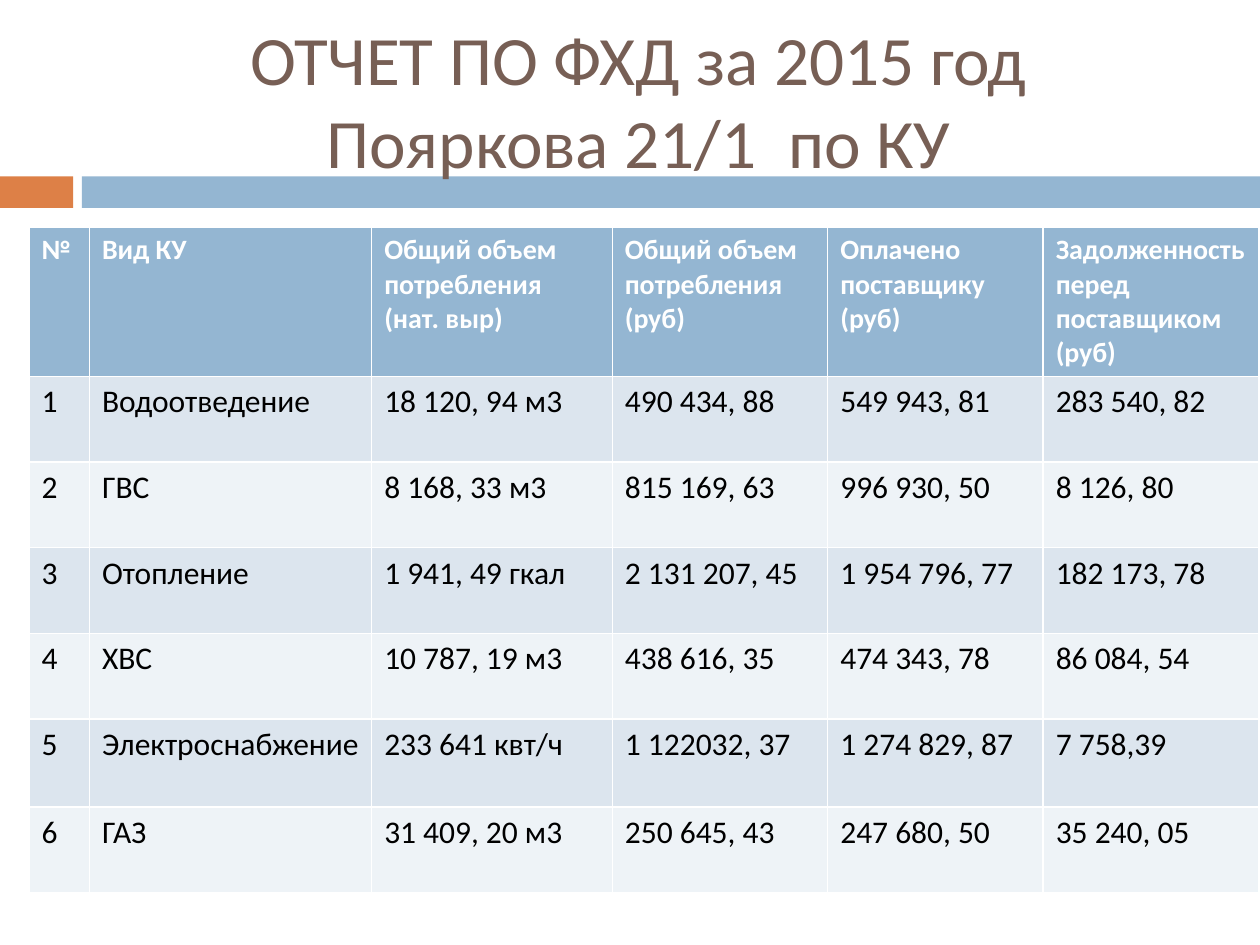
import pptx
import pptx.util
import pptx.dml.color
import pptx.enum.shapes
import pptx.enum.text

Inches = pptx.util.Inches

TITLE = "ОТЧЕТ ПО ФХД за 2015 год \vПояркова 21/1  по КУ "
HEADERS = [
    "№",
    "Вид КУ",
    "Общий объем потребления\n(нат. выр)",
    "Общий объем потребления\n(руб)",
    "Оплачено поставщику\n(руб)",
    "Задолженность перед поставщиком\n(руб)",
]
UTILITIES = [
    ("Водоотведение", "18 120, 94 м3", "490 434, 88", "549 943, 81", "283 540, 82"),
    ("ГВС", "8 168, 33 м3", "815 169, 63", "996 930, 50", "8 126, 80"),
    ("Отопление", "1 941, 49 гкал", "2 131 207, 45", "1 954 796, 77", "182 173, 78"),
    ("ХВС", "10 787, 19 м3", "438 616, 35", "474 343, 78", "86 084, 54"),
    ("Электроснабжение", "233 641 квт/ч", "1 122032, 37", "1 274 829, 87", "7 758,39"),
    ("ГАЗ", "31 409, 20 м3", "250 645, 43", "247 680, 50", "35 240, 05"),
]
COLUMN_WIDTHS = [0.48, 2.24, 1.91, 1.71, 1.71, 1.71]
ROW_HEIGHTS = [1.04, 0.68, 0.68, 0.68, 0.68, 0.7, 0.68]
BARS = [(0, 0.58, "orange"), (0.65, 9.35, "blue")]

THEME = {
    "font": "Calibri",
    "sizes": {"title": 39.6, "header": 16, "body": 18},
    "colors": {
        "title": "775F55",
        "orange": "DD8047",
        "blue": "94B6D2",
        "odd": "DCE5EE",
        "even": "EEF3F7",
        "header": "FFFFFF",
        "body": "000000",
    },
}


def color(name):
    return pptx.dml.color.RGBColor.from_string(THEME["colors"][name])


def format_text(frame, role, bold=False):
    for para in frame.paragraphs:
        for span in para.runs:
            span.font.name = THEME["font"]
            span.font.size = pptx.util.Pt(THEME["sizes"][role])
            span.font.color.rgb = color(role)
            span.font.bold = bold


def add_bars(page):
    for position, (left, width, fill) in enumerate(BARS):
        bar = page.shapes.add_shape(
            pptx.enum.shapes.MSO_SHAPE.RECTANGLE,
            Inches(left), Inches(1.4), Inches(width), Inches(0.25),
        )
        bar.shadow.inherit = False
        bar.fill.solid()
        bar.fill.fore_color.rgb = color(fill)
        bar.line.fill.background()
        page.shapes.element.insert(2 + position, bar.element)


def add_title(page):
    title = page.shapes.title
    title.left, title.top = Inches(0.67), Inches(0.25)
    title.width, title.height = Inches(8.92), Inches(1.08)
    frame = title.text_frame
    frame.text = TITLE
    frame.word_wrap = True
    frame.auto_size = pptx.enum.text.MSO_AUTO_SIZE.NONE
    frame.vertical_anchor = pptx.enum.text.MSO_ANCHOR.MIDDLE
    frame.paragraphs[0].alignment = pptx.enum.text.PP_ALIGN.CENTER
    format_text(frame, "title")


def add_report(page):
    rows = [HEADERS] + [(str(number), *row) for number, row in enumerate(UTILITIES, 1)]
    table = page.shapes.add_table(
        len(rows), len(HEADERS), Inches(0.23), Inches(1.8),
        Inches(sum(COLUMN_WIDTHS)), Inches(sum(ROW_HEIGHTS)),
    ).table
    for column, width in zip(table.columns, COLUMN_WIDTHS):
        column.width = Inches(width)
    for index, (row, height) in enumerate(zip(table.rows, ROW_HEIGHTS)):
        row.height = Inches(height)
        is_header = index == 0
        fill = "blue" if is_header else "odd" if index % 2 else "even"
        for cell, text in zip(row.cells, rows[index]):
            cell.text_frame.text = text
            cell.fill.solid()
            cell.fill.fore_color.rgb = color(fill)
            format_text(cell.text_frame, "header" if is_header else "body", is_header)


def main():
    deck = pptx.Presentation()
    deck.slide_width, deck.slide_height = Inches(10), Inches(7.5)
    page = deck.slides.add_slide(deck.slide_layouts.get_by_name("Title Only"))
    add_bars(page)
    add_title(page)
    add_report(page)
    deck.save("out.pptx")


if __name__ == "__main__":
    main()
